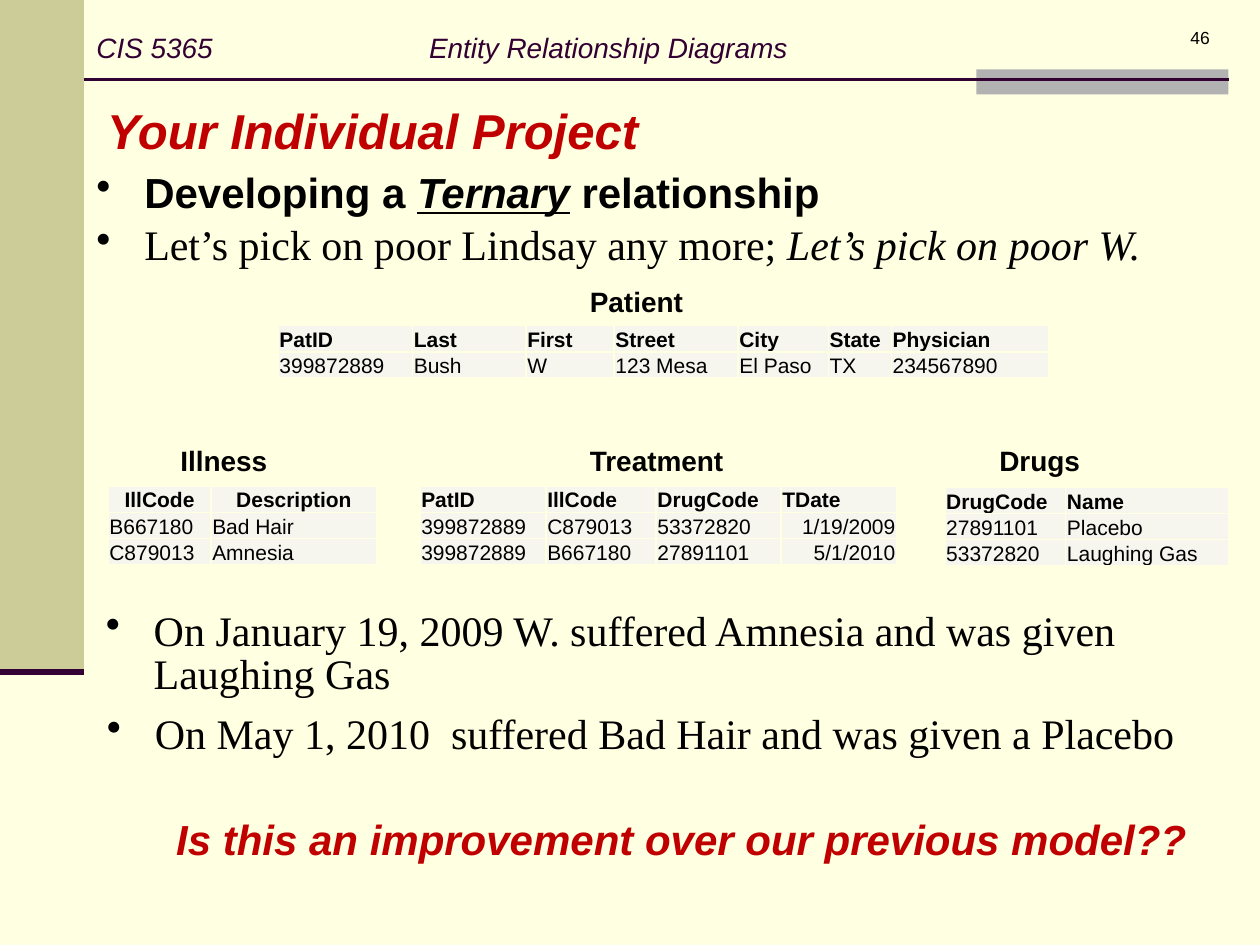
from lxml import etree
from pptx import Presentation, util as u
from pptx.dml.color import RGBColor
from pptx.enum import shapes, text
from pptx.oxml import ns

COLORS = {
    "bg": "FFFFE1", "band": "CCCC99", "tab": "B2B2B2", "rule": "330033",
    "accent": "C00000", "ink": "000000", "cell": "F6F6EF",
}
COLS, ROWS = 120, 90
WIDTH, HEIGHT = u.Inches(10), u.Inches(7.5)
ROW_HEIGHT = 2.5

HEADER = {"size": 16, "italic": True, "color": "rule"}
TITLE = {"size": 28, "bold": True, "italic": True, "color": "accent"}
NUMBER = {"size": 10}
HEADING = {"size": 24, "bold": True}
TERM = {**HEADING, "italic": True, "underline": True}
BODY = {"size": 24, "name": "Times New Roman"}
ASIDE = {**BODY, "italic": True}
LABEL = {"size": 16, "bold": True}
QUESTION = {"size": 24, "bold": True, "italic": True, "color": "accent"}
CELL = {"size": 12}
CELL_HEAD = {**CELL, "bold": True}

LEFT, CENTER, RIGHT = text.PP_ALIGN.LEFT, text.PP_ALIGN.CENTER, text.PP_ALIGN.RIGHT

TABLES = [
    ("Patient", (55, 27), (26.5, 31), [12.8, 10.8, 8.4, 11.8, 8.6, 6, 15], [
        ["PatID", "Last", "First", "Street", "City", "State", "Physician"],
        ["399872889", "Bush", "W", "123 Mesa", "El Paso", "TX", "234567890"],
    ], {}),
    ("Illness", (16, 42.1), (10.3, 46.3), [9.8, 15.8], [
        ["IllCode", "Description"],
        ["B667180", "Bad Hair"],
        ["C879013", "Amnesia"],
    ], {(0, 0): CENTER, (0, 1): CENTER}),
    ("Treatment", (55, 42.1), (40, 46.3), [12, 10.5, 11.9, 11], [
        ["PatID", "IllCode", "DrugCode", "TDate"],
        ["399872889", "C879013", "53372820", "1/19/2009"],
        ["399872889", "B667180", "27891101", "5/1/2010"],
    ], {(1, 3): RIGHT, (2, 3): RIGHT}),
    ("Drugs", (94, 42.1), (90, 46.4), [11.5, 15.5], [
        ["DrugCode", "Name"],
        ["27891101", "Placebo"],
        ["53372820", "Laughing Gas"],
    ], {}),
]

BULLETS = [
    ((8, 16, 112, 5.3), [("Developing a ", HEADING), ("Ternary", TERM), (" relationship", HEADING)]),
    ((8, 21, 106, 5.3), [("Let’s pick on poor Lindsay any more; ", BODY),
                         ("Let’s pick on poor W.", ASIDE)]),
    ((8.9, 57.7, 106, 9.5), [("On January 19, 2009 W. suffered Amnesia and was given Laughing Gas", BODY)]),
    ((9, 67.5, 106, 5.3), [("On May 1, 2010  suffered Bad Hair and was given a Placebo", BODY)]),
]


def x(col):
    return round(WIDTH * col / COLS)


def y(row):
    return round(HEIGHT * row / ROWS)


def box(left, top, width, height):
    return x(left), y(top), x(width), y(height)


def rgb(name):
    return RGBColor.from_string(COLORS[name])


def sub(parent, tag, **attrs):
    return etree.SubElement(parent, ns.qn(tag), attrs)


def add_runs(p, runs):
    for words, fmt in runs:
        r = p.add_run()
        r.text = words
        values = {"name": "Arial", "bold": False, "italic": False, **fmt}
        r.font.color.rgb = rgb(values.pop("color", "ink"))
        r.font.size = u.Pt(values.pop("size"))
        for key, value in values.items():
            setattr(r.font, key, value)


def fill_text(sp, runs, align=LEFT, anchor=text.MSO_ANCHOR.TOP, spacing=None, before=True):
    tf = sp.text_frame
    frame = {"word_wrap": True, "auto_size": text.MSO_AUTO_SIZE.NONE, "vertical_anchor": anchor}
    for key, value in frame.items():
        setattr(tf, key, value)
    p = tf.paragraphs[0]
    p.alignment = align
    p.line_spacing = spacing
    if before:
        sub(sub(p._p.get_or_add_pPr(), "a:spcBef"), "a:spcPct", val="50000")
    add_runs(p, runs)
    return p


def add_text(s, place, runs, **options):
    return fill_text(s.shapes.add_textbox(*box(*place)), runs, **options)


def add_bullet(s, place, runs):
    pPr = add_text(s, place, runs, spacing=0.85)._p.get_or_add_pPr()
    indent = u.Inches(0.38)
    pPr.set("marL", str(indent))
    pPr.set("indent", str(-indent))
    sub(pPr, "a:buChar", char="•")


def add_header(s):
    p = add_text(s, (8, -3, 110, 15), [("CIS 5365\tEntity Relationship Diagrams", HEADER)],
                 anchor=text.MSO_ANCHOR.MIDDLE, before=False)
    tabs = sub(p._p.get_or_add_pPr(), "a:tabLst")
    sub(tabs, "a:tab", pos=str(u.Inches(2.64)), algn="l")


def add_block(s, place, color):
    sp = s.shapes.add_shape(shapes.MSO_SHAPE.RECTANGLE, *box(*place))
    sp.shadow.inherit = False
    sp.fill.solid()
    sp.fill.fore_color.rgb = rgb(color)
    sp.line.fill.background()


def add_rule(s, start, end, row, weight):
    line = s.shapes.add_connector(shapes.MSO_CONNECTOR.STRAIGHT, x(start), y(row), x(end), y(row))
    line.line.color.rgb = rgb("rule")
    line.line.width = u.Pt(weight)
    sub(line._element.spPr, "a:effectLst")


def format_cell(cell, words, fmt, align):
    margins = {"margin_left": 0.01, "margin_right": 0.01, "margin_top": 0.01, "margin_bottom": 0}
    for key, value in margins.items():
        setattr(cell, key, u.Inches(value))
    cell.vertical_anchor = text.MSO_ANCHOR.BOTTOM
    tcPr = cell._tc.get_or_add_tcPr()
    for side in "LRTB":
        edge = sub(tcPr, f"a:ln{side}", w=str(u.Pt(1)))
        sub(sub(edge, "a:solidFill"), "a:srgbClr", val=COLORS["bg"])
    cell.fill.solid()
    cell.fill.fore_color.rgb = rgb("cell")
    p = cell.text_frame.paragraphs[0]
    p.alignment = align
    add_runs(p, [(words, fmt)])


def add_data_table(s, label, label_at, table_at, widths, rows, aligns):
    add_text(s, (*label_at, 17, 4), [(label, LABEL)], spacing=0.85)
    place = box(*table_at, sum(widths), ROW_HEIGHT * len(rows))
    table = s.shapes.add_table(len(rows), len(widths), *place).table
    table.first_row = table.horz_banding = False
    for column, width in zip(table.columns, widths):
        column.width = x(width)
    for i, row in enumerate(rows):
        table.rows[i].height = y(ROW_HEIGHT)
        for j, words in enumerate(row):
            format_cell(table.cell(i, j), words, CELL if i else CELL_HEAD, aligns.get((i, j), LEFT))


def main():
    prs = Presentation()
    prs.slide_width, prs.slide_height = WIDTH, HEIGHT
    s = prs.slides.add_slide(prs.slide_layouts[5])
    s.background.fill.solid()
    s.background.fill.fore_color.rgb = rgb("bg")

    add_block(s, (0, 0, 8, 64), "band")
    add_block(s, (93, 6.6, 24, 2.4), "tab")
    add_rule(s, 8, 117, 7.6, 1.5)
    add_rule(s, 0, 8, 64, 3.5)

    title = s.shapes.title
    title.left, title.top, title.width, title.height = box(9, 9, 63, 6.8)
    fill_text(title, [("Your Individual Project", TITLE)])
    add_text(s, (91.4, 2, 25, 6), [("46", NUMBER)], align=RIGHT, before=False)
    add_header(s)

    for place, runs in BULLETS:
        add_bullet(s, place, runs)
    for spec_row in TABLES:
        add_data_table(s, *spec_row)
    add_text(s, (13.7, 77.9, 102.4, 5), [("Is this an improvement over our previous model??", QUESTION)],
             align=CENTER, spacing=u.Pt(23))
    prs.save("out.pptx")


if __name__ == "__main__":
    main()
